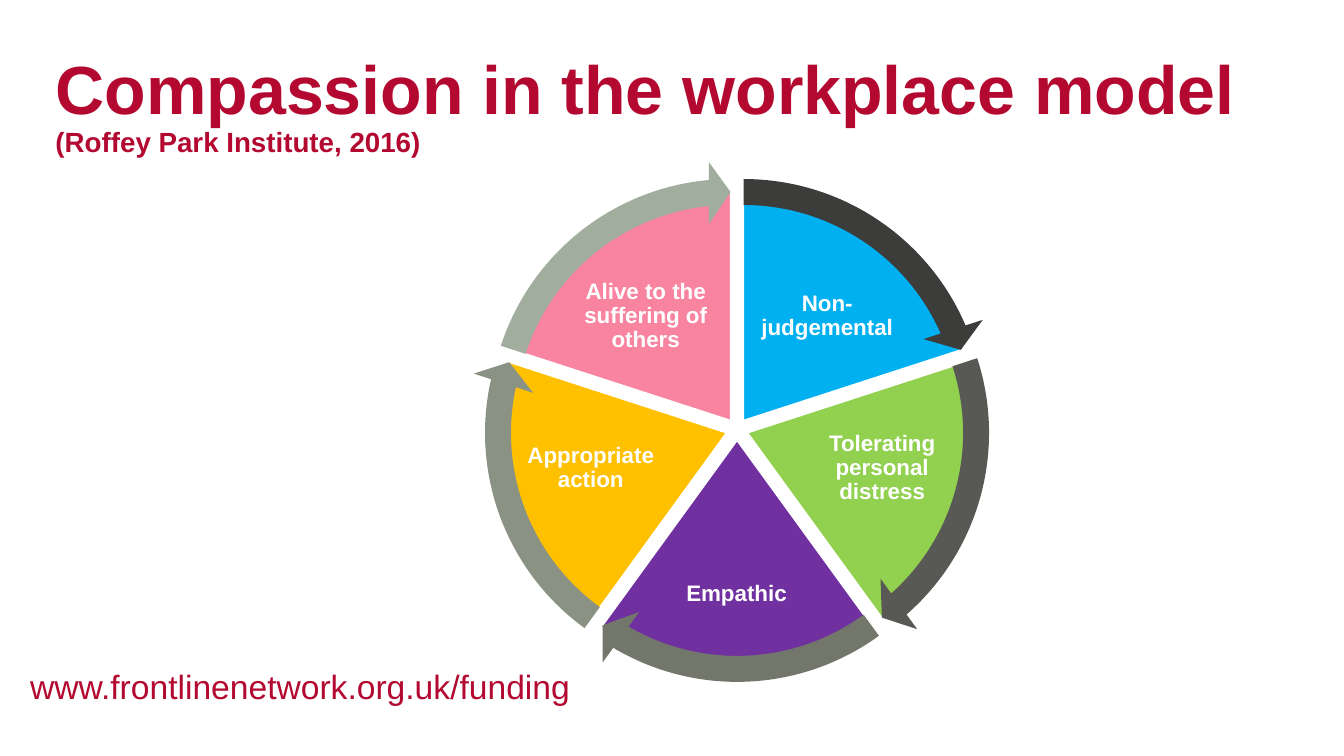
import math

import pptx
from pptx.dml.color import RGBColor
from pptx.enum.shapes import MSO_SHAPE
from pptx.enum.text import MSO_ANCHOR, PP_ALIGN
from pptx.util import Inches, Pt

CRIMSON = RGBColor(0xB3, 0x09, 0x31)
WHITE = RGBColor(0xFF, 0xFF, 0xFF)

CENTER_X, CENTER_Y = 7.31, 4.26
SECTOR_OFFSET = 0.11
PIE_SIZE = 4.58
ARROW_SIZE = 5.15
SWEEP = 72
HEAD_ANGLE = 5.46
ANGLE_UNIT = 0.6  # adjustment value of one degree

# label, sector colour, arrow colour, label box (left, top, width, height)
SECTORS = [
    ("Non-judgemental", RGBColor(0x00, 0xB0, 0xF0), RGBColor(0x3C, 0x3C, 0x3B),
     (7.47, 2.65, 1.47, 0.98)),
    ("Tolerating personal distress", RGBColor(0x92, 0xD0, 0x50), RGBColor(0x58, 0x59, 0x54),
     (8.07, 4.1, 1.36, 1.09)),
    ("Empathic", RGBColor(0x70, 0x30, 0xA0), RGBColor(0x72, 0x76, 0x6B),
     (6.65, 5.3, 1.31, 1.2)),
    ("Appropriate action", RGBColor(0xFF, 0xC0, 0x00), RGBColor(0x8A, 0x93, 0x83),
     (5.18, 4.1, 1.36, 1.09)),
    ("Alive to the suffering of others", RGBColor(0xF9, 0x84, 0xA0), RGBColor(0xA1, 0xAE, 0x9E),
     (5.67, 2.65, 1.47, 0.98)),
]


def style_font(font, size, color, bold):
    font.name = "Arial"
    font.size = Pt(size)
    font.bold = bold
    font.color.rgb = color


def add_wheel_shape(kind, size, start, color, adjustments):
    """Add a shape pushed outwards from the wheel centre along its sector's bisector."""
    bisector = math.radians(start + SWEEP / 2)
    left = CENTER_X + SECTOR_OFFSET * math.cos(bisector) - size / 2
    top = CENTER_Y + SECTOR_OFFSET * math.sin(bisector) - size / 2
    shape = page.shapes.add_shape(kind, Inches(left), Inches(top), Inches(size), Inches(size))
    for index, value in enumerate(adjustments):
        shape.adjustments[index] = value
    shape.shadow.inherit = False
    shape.fill.solid()
    shape.fill.fore_color.rgb = color
    shape.line.fill.background()
    return shape


deck = pptx.Presentation()
deck.slide_width = Inches(13.33)
deck.slide_height = Inches(7.5)
page = deck.slides.add_slide(deck.slide_layouts[5])

title = page.shapes.title
title.left, title.top = Inches(0.45), Inches(0.5)
title.width, title.height = Inches(12.44), Inches(1.04)
title.text_frame.word_wrap = True
title.text_frame.vertical_anchor = MSO_ANCHOR.TOP
para = title.text_frame.paragraphs[0]
para.alignment = PP_ALIGN.LEFT
para.line_spacing = 0.9
for text, size in [("Compassion in the workplace model ", 48.6),
                   ("(Roffey Park Institute, 2016)", 19.8)]:
    span = para.add_run()
    span.text = text
    style_font(span.font, size, CRIMSON, True)

address = page.shapes.add_textbox(Inches(0.2), Inches(6.56), Inches(6.38), Inches(0.5))
address.text_frame.word_wrap = True
para = address.text_frame.paragraphs[0]
para.text = "www.frontlinenetwork.org.uk/funding"
style_font(para.font, 24, CRIMSON, False)

starts = [(270 + SWEEP * index) % 360 for index in range(len(SECTORS))]

for start, (label, color, _, label_box) in zip(starts, SECTORS):
    end = (start + SWEEP) % 360
    pie = add_wheel_shape(MSO_SHAPE.PIE, PIE_SIZE, start, color,
                          [start * ANGLE_UNIT, end * ANGLE_UNIT])
    pie.line.color.rgb = WHITE
    pie.line.width = Pt(1)

    box = page.shapes.add_textbox(*[Inches(length) for length in label_box])
    frame = box.text_frame
    frame.word_wrap = True
    frame.vertical_anchor = MSO_ANCHOR.MIDDLE
    frame.margin_left = frame.margin_right = Inches(0.02)
    frame.margin_top = frame.margin_bottom = Inches(0.02)
    para = frame.paragraphs[0]
    para.text = label
    para.alignment = PP_ALIGN.CENTER
    para.line_spacing = 0.9
    style_font(para.font, 16, WHITE, True)

for start, (_, _, color, _) in zip(starts, SECTORS):
    arrow_end = (start + SWEEP) % 360 - HEAD_ANGLE
    add_wheel_shape(MSO_SHAPE.CIRCULAR_ARROW, ARROW_SIZE, start, color,
                    [0.05, HEAD_ANGLE * ANGLE_UNIT, arrow_end * ANGLE_UNIT,
                     start * ANGLE_UNIT, 0.06])

deck.save("out.pptx")
